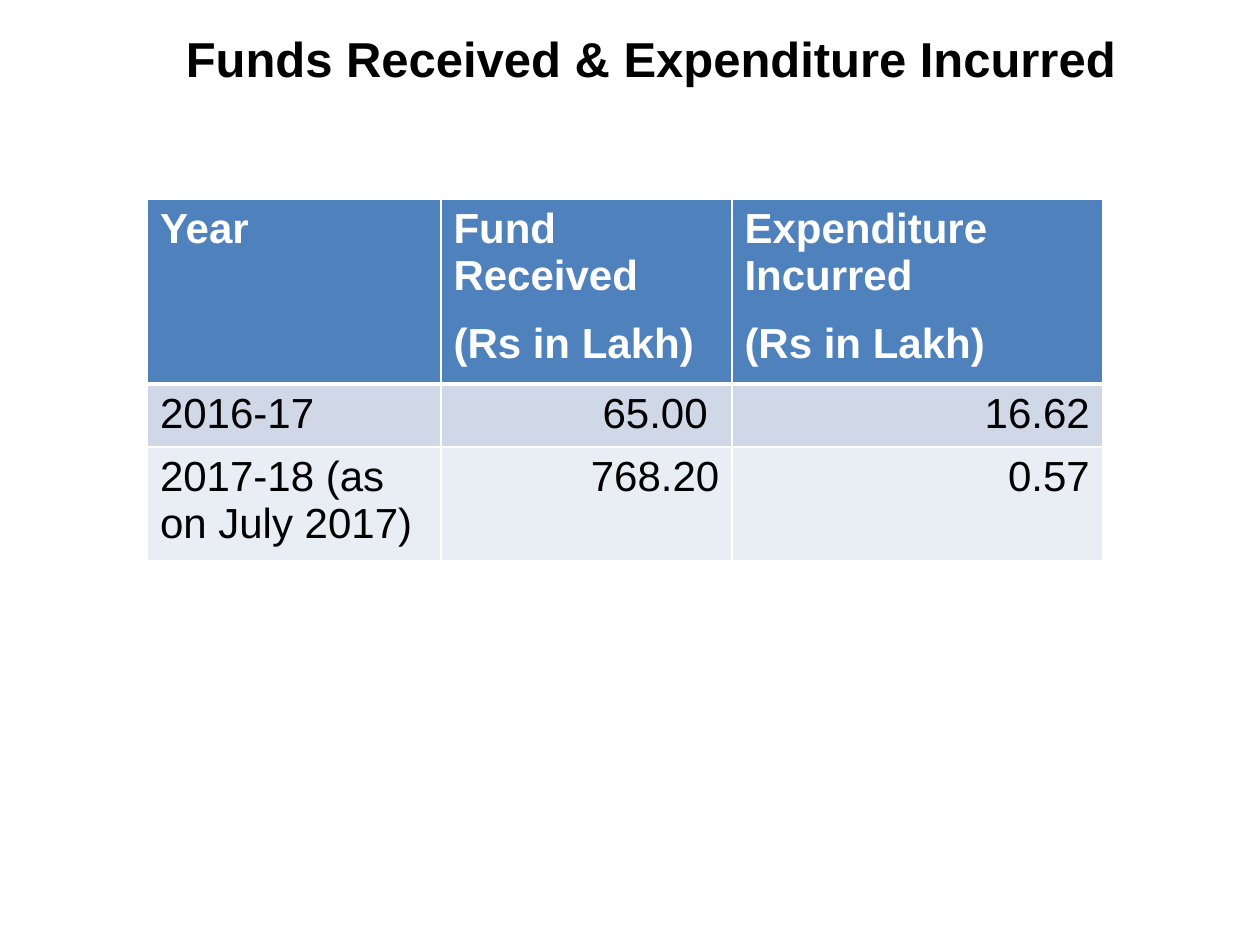
from dataclasses import dataclass

from lxml.etree import SubElement
from pptx import Presentation
from pptx.dml.color import RGBColor as Color
from pptx.enum.text import MSO_ANCHOR as Anchor, PP_ALIGN as Align
from pptx.oxml.ns import qn
from pptx.util import Pt

TITLE = "Funds Received & Expenditure Incurred"
ROWS = [
    ("Year", "Fund Received\n(Rs in Lakh)", "Expenditure Incurred\n(Rs in Lakh)"),
    ("2016-17", "65.00 ", "16.62"),
    ("2017-18 (as on July 2017)", "768.20", "0.57"),
]
COLUMN_WIDTHS = [167.75, 166.3, 211.7]
ROW_HEIGHT = 29.5
TABLE_LEFT, TABLE_TOP, TABLE_HEIGHT = 84.25, 113.75, 206.65


@dataclass(frozen=True)
class Theme:
    font: str = "Arial"
    title_size: int = 28
    table_size: int = 24
    dark: str = "000000"
    light: str = "FFFFFF"
    row_fills: tuple = ("4F81BD", "D0D8E8", "E9EDF4")
    rule: float = 1
    header_rule: float = 3


THEME = Theme()


def style_paragraph(para, size, color, bold, align):
    para.alignment = align
    for span in para.runs:
        span.font.name = THEME.font
        span.font.size = Pt(size)
        span.font.bold = bold
        span.font.color.rgb = Color.from_string(color)


def set_borders(cell, widths):
    properties = cell._tc.get_or_add_tcPr()
    for position, (side, width) in enumerate(widths.items()):
        line = SubElement(properties, qn(f"a:ln{side}"), w=str(Pt(width)))
        fill = SubElement(line, qn("a:solidFill"))
        SubElement(fill, qn("a:srgbClr"), val=THEME.light)
        properties.remove(line)
        properties.insert(position, line)


def add_title(page):
    box = page.shapes.add_textbox(Pt(23.75), Pt(0), Pt(696.25), Pt(66))
    frame = box.text_frame
    frame.word_wrap = True
    frame.vertical_anchor = Anchor.MIDDLE
    frame.text = TITLE
    style_paragraph(frame.paragraphs[0], THEME.title_size, THEME.dark, True, Align.CENTER)


def fill_cell(cell, text, row, column):
    header = row == 0
    cell.text = text
    cell.fill.solid()
    cell.fill.fore_color.rgb = Color.from_string(THEME.row_fills[row])
    for para in cell.text_frame.paragraphs:
        style_paragraph(
            para,
            THEME.table_size,
            THEME.light if header else THEME.dark,
            header,
            Align.LEFT if header or column == 0 else Align.RIGHT,
        )
        para.space_before = para.space_after = Pt(6)
    widths = dict.fromkeys("LRTB", THEME.rule)
    if header:
        widths["B"] = THEME.header_rule
    elif row == 1:
        widths["T"] = THEME.header_rule
    set_borders(cell, widths)


def add_funds_table(page):
    holder = page.shapes.add_table(
        len(ROWS), len(COLUMN_WIDTHS), Pt(TABLE_LEFT), Pt(TABLE_TOP),
        Pt(sum(COLUMN_WIDTHS)), Pt(TABLE_HEIGHT),
    )
    table = holder.table
    for column, width in zip(table.columns, COLUMN_WIDTHS):
        column.width = Pt(width)
    for row, texts in enumerate(ROWS):
        table.rows[row].height = Pt(ROW_HEIGHT)
        for column, text in enumerate(texts):
            fill_cell(table.cell(row, column), text, row, column)
    holder.height = Pt(TABLE_HEIGHT)


def main():
    deck = Presentation()
    deck.slide_width, deck.slide_height = Pt(720), Pt(540)
    page = deck.slides.add_slide(deck.slide_layouts[6])
    add_title(page)
    add_funds_table(page)
    deck.save("out.pptx")


if __name__ == "__main__":
    main()
